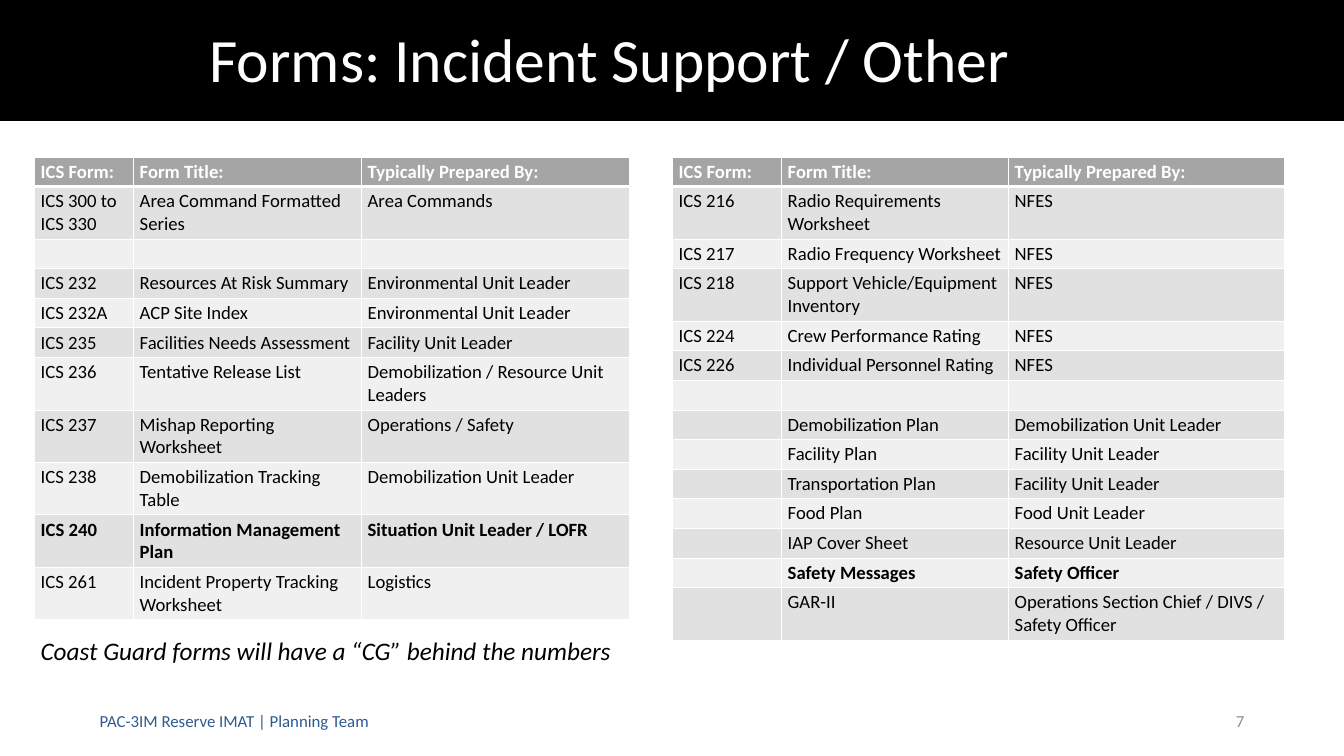
from pptx import Presentation
from pptx import util as u
from pptx.dml.color import RGBColor
from pptx.enum import shapes, text
from pptx.oxml.ns import qn
from lxml import etree

BLACK = RGBColor(0x00, 0x00, 0x00)
WHITE = RGBColor(0xFF, 0xFF, 0xFF)
HEADER_GRAY = RGBColor(0xA5, 0xA5, 0xA5)
BANDS = (RGBColor(0xE1, 0xE1, 0xE1), RGBColor(0xF0, 0xF0, 0xF0))
FOOTER_BLUE = RGBColor(0x2D, 0x5B, 0x8D)
NUMBER_GRAY = RGBColor(0x8C, 0x8C, 0x8C)
FONT = "Calibri"

HEADER = ("ICS Form:", "Form Title:", "Typically Prepared By:")
SUPPORT_FORMS = [
    ("ICS 300 to ICS 330", "Area Command Formatted Series", "Area Commands"),
    ("", "", ""),
    ("ICS 232", "Resources At Risk Summary", "Environmental Unit Leader"),
    ("ICS 232A", "ACP Site Index", "Environmental Unit Leader"),
    ("ICS 235", "Facilities Needs Assessment", "Facility Unit Leader"),
    ("ICS 236", "Tentative Release List", "Demobilization / Resource Unit Leaders"),
    ("ICS 237", "Mishap Reporting Worksheet", "Operations / Safety"),
    ("ICS 238", "Demobilization Tracking Table", "Demobilization Unit Leader"),
    ("ICS 240", "Information Management Plan", "Situation Unit Leader / LOFR"),
    ("ICS 261", "Incident Property Tracking Worksheet", "Logistics"),
]
OTHER_FORMS = [
    ("ICS 216", "Radio Requirements Worksheet", "NFES"),
    ("ICS 217", "Radio Frequency Worksheet", "NFES"),
    ("ICS 218", "Support Vehicle/Equipment Inventory", "NFES"),
    ("ICS 224", "Crew Performance Rating", "NFES"),
    ("ICS 226", "Individual Personnel Rating", "NFES"),
    ("", "", ""),
    ("", "Demobilization Plan", "Demobilization Unit Leader"),
    ("", "Facility Plan", "Facility Unit Leader"),
    ("", "Transportation Plan", "Facility Unit Leader"),
    ("", "Food Plan", "Food Unit Leader"),
    ("", "IAP Cover Sheet", "Resource Unit Leader"),
    ("", "Safety Messages", "Safety Officer"),
    ("", "GAR-II", "Operations Section Chief / DIVS / Safety Officer"),
]
BOLD_TITLES = {"Information Management Plan", "Safety Messages"}

# Left edge, column widths, rows
TABLES = [
    (34, (99, 228, 268), SUPPORT_FORMS),
    (672, (109, 227, 276), OTHER_FORMS),
]
TABLE_TOP, ROW_HEIGHT = 157, 29

MIDDLE, TOP = text.MSO_ANCHOR.MIDDLE, text.MSO_ANCHOR.TOP
LEFT, RIGHT = text.PP_ALIGN.LEFT, text.PP_ALIGN.RIGHT
# Text, place, size, colour, anchor, alignment, italic, line spacing
TEXTS = [
    ("Forms: Incident Support / Other", (203, 3, 1117, 119), 66, WHITE, MIDDLE, LEFT, False, 0.9),
    ("PAC-3IM Reserve IMAT | Planning Team", (93, 701, 612, 40), 18, FOOTER_BLUE, MIDDLE, LEFT, False, 1.0),
    ("7", (949, 701, 302, 40), 18, NUMBER_GRAY, MIDDLE, RIGHT, False, 1.0),
    ("Coast Guard forms will have a “CG” behind the numbers",
     (34, 632, 595, 38), 27, BLACK, TOP, LEFT, True, 1.0),
]


def px(count):
    return u.Emu(round(count * 914400 / 67.2))


def set_font(para, size, color, bold=False, italic=False):
    font = para.font
    font.name, font.size = FONT, u.Pt(size)
    font.bold, font.italic = bold, italic
    font.color.rgb = color


def add_text(page, words, place, size, color, anchor, align, italic, spacing):
    frame = page.shapes.add_textbox(*map(px, place)).text_frame
    frame.word_wrap = True
    frame.vertical_anchor = anchor
    para = frame.paragraphs[0]
    para.text = words
    para.alignment = align
    para.line_spacing = spacing
    set_font(para, size, color, italic=italic)


def set_borders(cell, top, bottom):
    props = cell._tc.get_or_add_tcPr()
    for tag, width in (("a:lnL", 1), ("a:lnR", 1), ("a:lnT", top), ("a:lnB", bottom)):
        line = etree.SubElement(props, qn(tag), w=str(u.Pt(width)))
        fill = etree.SubElement(line, qn("a:solidFill"))
        etree.SubElement(fill, qn("a:srgbClr"), val=str(WHITE))


def add_forms_table(page, left, widths, forms):
    rows = [HEADER] + forms
    place = (left, TABLE_TOP, sum(widths), ROW_HEIGHT * len(rows))
    table = page.shapes.add_table(len(rows), len(widths), *map(px, place)).table
    for column, width in zip(table.columns, widths):
        column.width = px(width)
    for r, row in enumerate(rows):
        table.rows[r].height = px(ROW_HEIGHT)
        is_header = r == 0
        for c, words in enumerate(row):
            cell = table.cell(r, c)
            set_borders(cell, top=3 if r == 1 else 1, bottom=3 if is_header else 1)
            cell.fill.solid()
            cell.fill.fore_color.rgb = HEADER_GRAY if is_header else BANDS[(r - 1) % 2]
            para = cell.text_frame.paragraphs[0]
            if words:
                para.text = words
            set_font(para, 20, WHITE if is_header else BLACK,
                     bold=is_header or row[1] in BOLD_TITLES)


def main():
    deck = Presentation()
    deck.slide_width, deck.slide_height = px(1344), px(756)
    page = deck.slides.add_slide(deck.slide_layouts[6])

    # Title band
    band = page.shapes.add_shape(shapes.MSO_SHAPE.RECTANGLE, 0, 0, px(1344), px(121))
    band.shadow.inherit = False
    band.fill.solid()
    band.fill.fore_color.rgb = BLACK
    band.line.fill.background()

    # Form tables
    for left, widths, forms in TABLES:
        add_forms_table(page, left, widths, forms)

    # Title, footer, page number and note
    for item in TEXTS:
        add_text(page, *item)

    deck.save("out.pptx")


if __name__ == "__main__":
    main()
